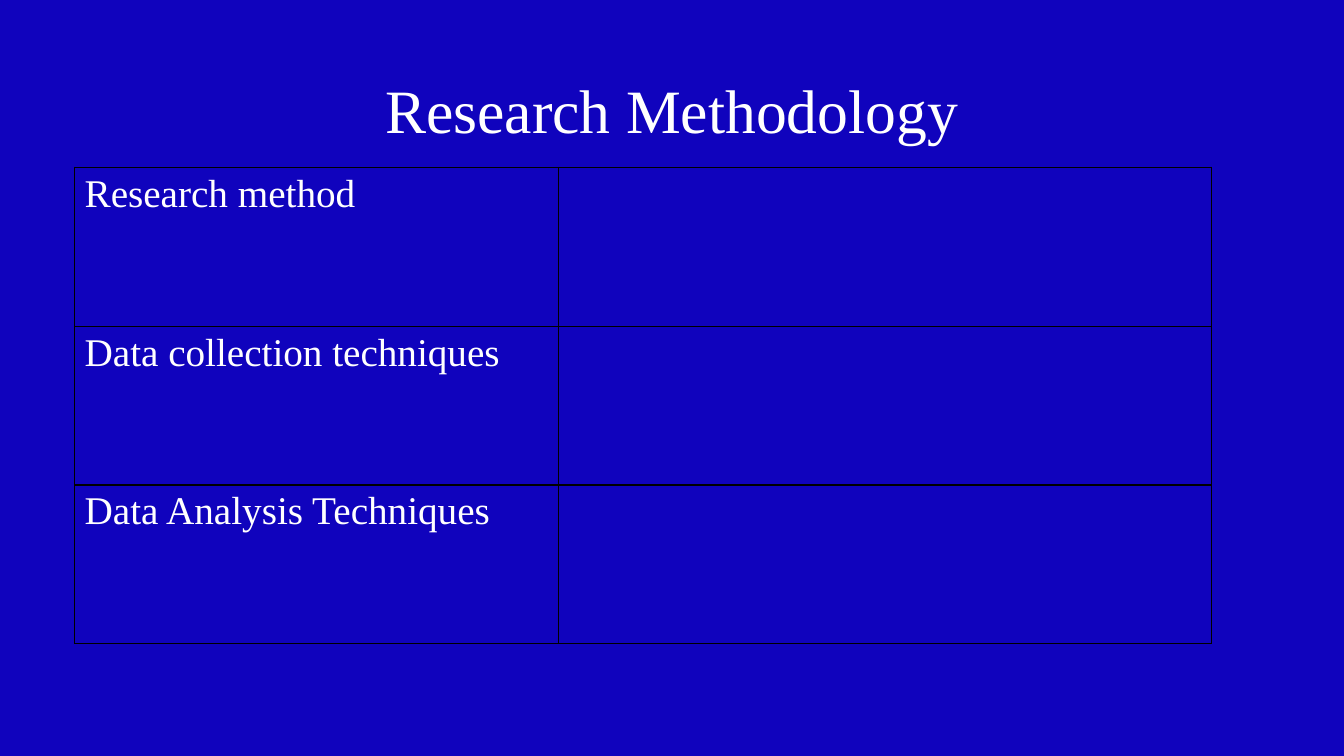
import pptx
import pptx.dml.color
import pptx.enum.text
import pptx.oxml
import pptx.oxml.ns
import pptx.util
from pptx.util import Cm

BLUE = pptx.dml.color.RGBColor(0x10, 0x03, 0xBD)
WHITE = pptx.dml.color.RGBColor(0xFF, 0xFF, 0xFF)
BLACK = pptx.dml.color.RGBColor(0x00, 0x00, 0x00)

TITLE_ONLY = 5
METHOD_TOPICS = [
    "Research method",
    "Data collection techniques",
    "Data Analysis Techniques",
]


class MethodologySlide:
    font_name = "Times New Roman"
    text_color = WHITE
    border_width = pptx.util.Pt(1)

    def __init__(self, deck):
        self.slide = deck.slides.add_slide(deck.slide_layouts[TITLE_ONLY])
        background = self.slide.background.fill
        background.solid()
        background.fore_color.rgb = BLUE

    def add_text(self, frame, wording, size):
        """Put one styled line of text into a text frame."""
        line = frame.paragraphs[0]
        run = line.add_run()
        run.text = wording
        font_format = {"name": self.font_name, "size": pptx.util.Pt(size), "bold": False}
        for attribute, value in font_format.items():
            setattr(run.font, attribute, value)
        run.font.color.rgb = self.text_color
        return line

    def add_title(self, wording, left, top, width, height):
        heading = self.slide.shapes.title
        place = {"left": left, "top": top, "width": width, "height": height}
        for attribute, value in place.items():
            setattr(heading, attribute, value)
        heading.text_frame.vertical_anchor = pptx.enum.text.MSO_ANCHOR.MIDDLE
        line = self.add_text(heading.text_frame, wording, 44)
        line.alignment = pptx.enum.text.PP_ALIGN.CENTER
        line.line_spacing = 0.9

    def add_topic_table(self, topics, left, top, column_widths, row_height):
        """Add a grid with topics in the first column and room for answers."""
        grid = self.slide.shapes.add_table(
            len(topics), len(column_widths), left, top,
            sum(column_widths), row_height * len(topics)).table
        for flag in ("first_row", "horz_banding"):
            setattr(grid, flag, False)
        for column, width in zip(grid.columns, column_widths):
            column.width = width
        for row, topic in zip(grid.rows, topics):
            row.height = row_height
            for cell in row.cells:
                self.add_borders(cell)
                cell.fill.background()
            self.add_text(row.cells[0].text_frame, topic, 28)

    def add_borders(self, cell):
        properties = cell._tc.get_or_add_tcPr()
        for side in ("lnL", "lnR", "lnT", "lnB"):
            properties.append(pptx.oxml.parse_xml(
                f'<a:{side} {pptx.oxml.ns.nsdecls("a")} w="{self.border_width}">'
                f'<a:solidFill><a:srgbClr val="{BLACK}"/></a:solidFill></a:{side}>'))


def main():
    deck = pptx.Presentation()
    deck.slide_width = Cm(33.87)
    deck.slide_height = Cm(19.05)
    methodology = MethodologySlide(deck)
    methodology.add_title("Research Methodology", Cm(2.33), Cm(1.01), Cm(29.21), Cm(3.68))
    methodology.add_topic_table(
        METHOD_TOPICS, Cm(1.88), Cm(4.22), [Cm(12.19), Cm(16.46)], Cm(4))
    deck.save("out.pptx")


if __name__ == "__main__":
    main()
